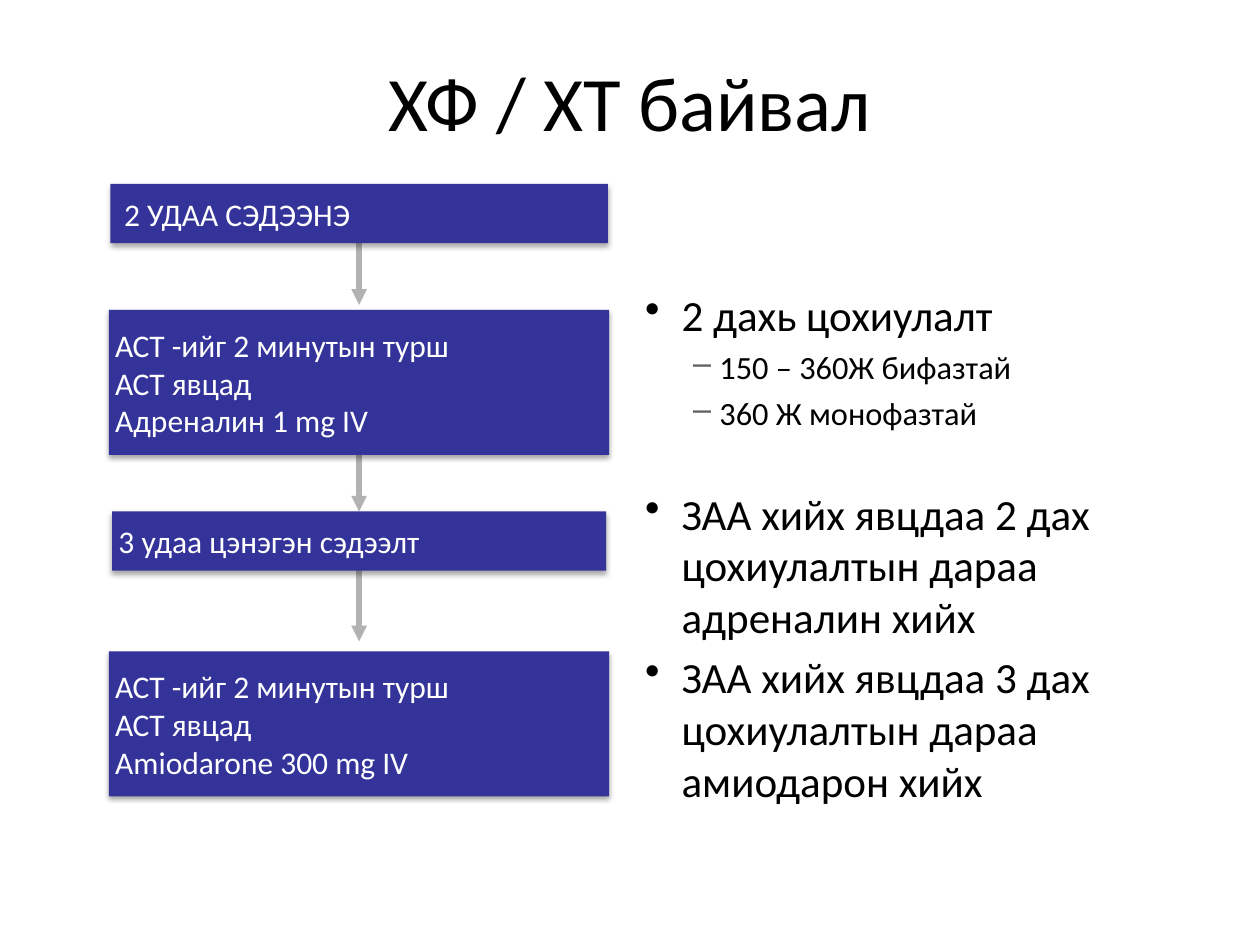
from dataclasses import dataclass

from lxml import etree
from pptx import Presentation
from pptx.dml.color import RGBColor
from pptx.enum.shapes import MSO_CONNECTOR, MSO_SHAPE
from pptx.enum.text import MSO_ANCHOR, PP_ALIGN
from pptx.oxml.ns import qn
from pptx.util import Inches, Pt

RECT = MSO_SHAPE.RECTANGLE
LINE = MSO_CONNECTOR.STRAIGHT
TOP, MID = MSO_ANCHOR.TOP, MSO_ANCHOR.MIDDLE
LEFT, CENTER = PP_ALIGN.LEFT, PP_ALIGN.CENTER


@dataclass(frozen=True)
class Theme:
    font: str = "Calibri"
    ink: str = "000000"
    box: str = "333399"
    light: str = "FFFFFF"
    line: str = "B2B2B2"
    dash: str = "5F5F5F"
    title: float = 44
    body: float = 24.6
    sub: float = 18.5
    step: float = 18


def add(parent, tag, **attrs):
    node = etree.SubElement(parent, qn(tag))
    for key, value in attrs.items():
        node.set(key, str(value))
    return node


class Deck:
    def __init__(self, theme):
        self.theme = theme
        self.prs = Presentation()
        self.prs.slide_width = Inches(10)
        self.prs.slide_height = Inches(7.5)
        self.slide = self.prs.slides.add_slide(self.prs.slide_layouts[6])

    def frame(self, shape, anchor):
        frame = shape.text_frame
        frame.word_wrap = True
        frame.vertical_anchor = anchor
        frame.margin_left = frame.margin_right = Inches(0.05)
        frame.margin_top = frame.margin_bottom = Inches(0.05)
        return frame

    def text(self, para, words, size, color):
        run = para.add_run()
        run.text = words
        run.font.name = self.theme.font
        run.font.size = Pt(size)
        run.font.color.rgb = RGBColor.from_string(color)

    def title(self, words, *area):
        shape = self.slide.shapes.add_textbox(*map(Inches, area))
        para = self.frame(shape, MID).paragraphs[0]
        para.alignment = CENTER
        self.text(para, words, self.theme.title, self.theme.ink)

    def bullets(self, items, *area):
        look = self.theme
        # Per level: left indent, hanging indent, mark, mark colour, size
        levels = (
            (0.29, 0.29, "•", look.ink, look.body),
            (0.59, 0.21, "–", look.dash, look.sub),
        )
        shape = self.slide.shapes.add_textbox(*map(Inches, area))
        frame = self.frame(shape, TOP)
        for i, (level, gap, words) in enumerate(items):
            left, hang, mark, color, size = levels[level]
            para = frame.paragraphs[0] if i == 0 else frame.add_paragraph()
            para.level = level
            if i:
                para.space_before = Pt(gap)
            props = para._p.get_or_add_pPr()
            props.set("marL", str(Inches(left)))
            props.set("indent", str(-Inches(hang)))
            add(add(props, "a:buClr"), "a:srgbClr", val=color)
            add(props, "a:buChar", char=mark)
            self.text(para, words, size, look.ink)

    def arrow(self, x, top, end):
        line = self.slide.shapes.add_connector(
            LINE, Inches(x), Inches(top), Inches(x), Inches(end))
        line.line.color.rgb = RGBColor.from_string(self.theme.line)
        line.line.width = Pt(3)
        props = line._element.spPr
        add(props.find(qn("a:ln")), "a:tailEnd", type="triangle")
        add(props, "a:effectLst")
        return line

    def step(self, lines, mid, top, width, height, inset=0.05):
        look = self.theme
        box = self.slide.shapes.add_shape(
            RECT, Inches(mid - width / 2), Inches(top),
            Inches(width), Inches(height))
        box.fill.solid()
        box.fill.fore_color.rgb = RGBColor.from_string(look.box)
        box.line.fill.background()
        # Soft shadow straight below
        box.shadow.inherit = False
        effects = box._element.spPr.find(qn("a:effectLst"))
        shade = add(effects, "a:outerShdw", blurRad=Pt(3), dist=Pt(1.8),
                    dir=90 * 60000, rotWithShape=0)
        add(add(shade, "a:srgbClr", val="000000"), "a:alpha", val=35000)
        frame = self.frame(box, MID)
        frame.margin_left = Inches(inset)
        for i, words in enumerate(lines):
            para = frame.paragraphs[0] if i == 0 else frame.add_paragraph()
            para.alignment = LEFT
            self.text(para, words, look.step, look.light)
        return box


def main():
    deck = Deck(Theme())
    deck.title("ХФ / ХТ байвал", 1.22, -0.08, 7.56, 1.75)

    # Notes on the right: level, space before, text
    deck.bullets([
        (0, 0, "2 дахь цохиулалт"),
        (1, 4, "150 – 360Ж бифазтай"),
        (1, 4, "360 Ж монофазтай"),
        (0, 31.5, "ЗАА хийх явцдаа 2 дах цохиулалтын дараа адреналин хийх"),
        (0, 5, "ЗАА хийх явцдаа 3 дах цохиулалтын дараа амиодарон хийх"),
    ], 5.07, 2.24, 3.7, 5.26)

    # Arrows lie behind the steps
    mid = 2.85
    first, second, _ = [deck.arrow(mid, top, end) for top, end in
                        ((1.93, 2.42), (3.2, 4.06), (4.33, 5.09))]

    # Steps, from top to bottom
    cycle = ["АСТ -ийг 2 минутын турш", "АСТ явцад"]
    start = deck.step(["2 УДАА СЭДЭЭНЭ"], mid, 1.46, 3.95, 0.47, 0.11)
    deck.step(cycle + ["Адреналин 1 mg IV"], mid, 2.46, 3.97, 1.15)
    third = deck.step(["3 удаа цэнэгэн сэдээлт"], mid, 4.06, 3.92, 0.47)
    deck.step(cycle + ["Amiodarone 300 mg IV"], mid, 5.17, 3.97, 1.15)
    first.begin_connect(start, 2)
    second.end_connect(third, 0)

    deck.prs.save("out.pptx")


if __name__ == "__main__":
    main()
